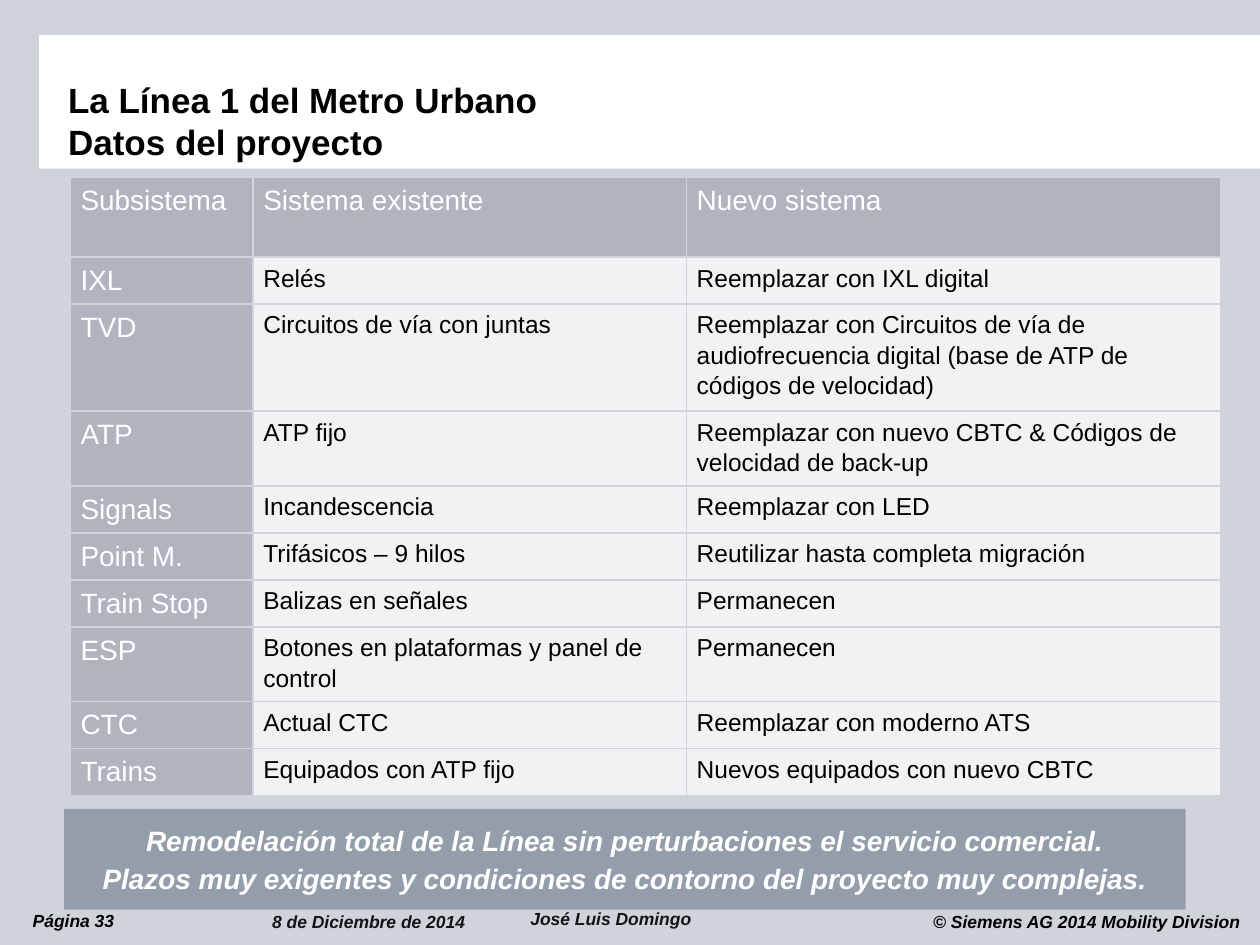
from lxml import etree
from pptx import Presentation
from pptx.dml.color import RGBColor
from pptx.enum.shapes import MSO_SHAPE
from pptx.enum.text import MSO_ANCHOR, PP_ALIGN
from pptx.oxml.ns import qn
from pptx.util import Inches, Pt

RECT = MSO_SHAPE.RECTANGLE
TOP, MIDDLE, BOTTOM = MSO_ANCHOR.TOP, MSO_ANCHOR.MIDDLE, MSO_ANCHOR.BOTTOM
LEFT, CENTER, RIGHT = PP_ALIGN.LEFT, PP_ALIGN.CENTER, PP_ALIGN.RIGHT

THEME = {
    "font": "Arial",
    "background": "D0D3DA", "band": "FEFFFF", "label": "AFB4BE",
    "cell": "F2F2F4", "callout": "949EAA",
    "title_text": {"size": 20, "color": "000000", "bold": True},
    "label_text": {"size": 16, "color": "FFFFFF"},
    "cell_text": {"size": 14, "color": "000000"},
    "callout_text": {"size": 16, "color": "FFFFFF", "bold": True, "italic": True},
    "footer_text": {"size": 10, "color": "000000", "bold": True, "italic": True},
    "footer_gray": {"size": 10, "color": "131418", "bold": True, "italic": True},
}

TITLE = "La Línea 1 del Metro Urbano\vDatos del proyecto"
HEADER = ("Subsistema", "Sistema existente", "Nuevo sistema")
# Each row ends with the number of text lines it holds
SUBSYSTEMS = [
    ("IXL", "Relés", "Reemplazar con IXL digital", 1),
    ("TVD", "Circuitos de vía con juntas",
     "Reemplazar con Circuitos de vía de audiofrecuencia digital "
     "(base de ATP de códigos de velocidad)", 3),
    ("ATP", "ATP fijo",
     "Reemplazar con nuevo CBTC & Códigos de velocidad de back-up", 2),
    ("Signals", "Incandescencia", "Reemplazar con LED", 1),
    ("Point M.", "Trifásicos – 9 hilos", "Reutilizar hasta completa migración", 1),
    ("Train Stop", "Balizas en señales", "Permanecen", 1),
    ("ESP", "Botones en plataformas y panel de control", "Permanecen", 2),
    ("CTC", "Actual CTC", "Reemplazar con moderno ATS", 1),
    ("Trains", "Equipados con ATP fijo", "Nuevos equipados con nuevo CBTC", 1),
]
CALLOUT = [
    "Remodelación total de la Línea sin perturbaciones el servicio comercial.",
    "Plazos muy exigentes y condiciones de contorno del proyecto muy complejas.",
]
# text, box, style, alignment, anchor
FOOTERS = [
    ("© Siemens AG 2014 Mobility Division", (3.99, 7.1, 5.85, 0.3),
     "footer_text", RIGHT, BOTTOM),
    ("Página 33", (0.26, 7.22, 0.78, 0.28), "footer_text", LEFT, TOP),
    ("8 de Diciembre de 2014", (2.16, 7.23, 1.58, 0.17), "footer_gray", LEFT, BOTTOM),
    ("José Luis Domingo", (4.21, 7.08, 1.44, 0.29), "footer_gray", LEFT, BOTTOM),
]

TABLE_LEFT, TABLE_TOP = 0.56, 1.41
COLUMN_WIDTHS = (1.45, 3.44, 4.24)
HEADER_HEIGHT = 0.63
ROW_HEIGHTS = {1: 0.37, 2: 0.59, 3: 0.85}


def paint(fill, color):
    fill.solid()
    fill.fore_color.rgb = RGBColor.from_string(THEME[color])


def write(tf, lines, style, **paragraph_format):
    look = dict(THEME[style])
    look["size"] = Pt(look["size"])
    color = RGBColor.from_string(look.pop("color"))
    for i, line in enumerate(lines):
        p = tf.paragraphs[0] if i == 0 else tf.add_paragraph()
        p.text = line
        for name, value in paragraph_format.items():
            if name != "space_before" or i:
                setattr(p, name, value)
        for r in p.runs:
            r.font.name = THEME["font"]
            r.font.color.rgb = color
            for name, value in look.items():
                setattr(r.font, name, value)


def set_frame(tf, anchor, margin=0):
    tf.word_wrap = True
    tf.vertical_anchor = anchor
    for side in ("left", "top", "right", "bottom"):
        setattr(tf, f"margin_{side}", Inches(margin))


def add_text(s, box, lines, style, anchor, **paragraph_format):
    tf = s.shapes.add_textbox(*map(Inches, box)).text_frame
    set_frame(tf, anchor)
    write(tf, lines, style, **paragraph_format)


def add_rect(s, box, color):
    sp = s.shapes.add_shape(RECT, *map(Inches, box))
    sp.shadow.inherit = False
    sp.line.fill.background()
    paint(sp.fill, color)
    return sp


def add_borders(cell):
    """Draw a thin rule in the background colour on all four sides."""
    tc_pr = cell._tc.get_or_add_tcPr()
    for i, side in enumerate(("a:lnL", "a:lnR", "a:lnT", "a:lnB")):
        ln = etree.Element(qn(side), w=str(Pt(1)))
        solid = etree.SubElement(ln, qn("a:solidFill"))
        etree.SubElement(solid, qn("a:srgbClr"), val=THEME["background"])
        tc_pr.insert(i, ln)


def add_subsystem_table(s):
    rows = [HEADER] + [row[:3] for row in SUBSYSTEMS]
    heights = [HEADER_HEIGHT] + [ROW_HEIGHTS[row[3]] for row in SUBSYSTEMS]
    box = (TABLE_LEFT, TABLE_TOP, sum(COLUMN_WIDTHS), sum(heights))
    table = s.shapes.add_table(len(rows), len(HEADER), *map(Inches, box)).table
    for column, width in zip(table.columns, COLUMN_WIDTHS):
        column.width = Inches(width)
    for i, (texts, height) in enumerate(zip(rows, heights)):
        table.rows[i].height = Inches(height)
        for j, text in enumerate(texts):
            kind = "label" if i == 0 or j == 0 else "cell"
            cell = table.cell(i, j)
            cell.margin_left = cell.margin_right = Inches(0.08)
            cell.margin_top = cell.margin_bottom = Inches(0.04)
            paint(cell.fill, kind)
            add_borders(cell)
            write(cell.text_frame, [text], f"{kind}_text", line_spacing=1.1)


def main():
    prs = Presentation()
    prs.slide_width, prs.slide_height = Inches(10), Inches(7.5)
    s = prs.slides.add_slide(prs.slide_layouts[6])
    paint(s.background.fill, "background")

    add_rect(s, (0.31, 0.28, 9.69, 1.06), "band")
    for text, box, style, align, anchor in FOOTERS:
        add_text(s, box, [text], style, anchor, alignment=align)
    add_subsystem_table(s)
    add_text(s, (0.54, 0.4, 9.24, 0.89), [TITLE], "title_text", BOTTOM,
             line_spacing=Pt(24))

    callout = add_rect(s, (0.51, 6.42, 8.9, 0.8), "callout")
    set_frame(callout.text_frame, MIDDLE, 0.12)
    write(callout.text_frame, CALLOUT, "callout_text",
          alignment=CENTER, space_before=Pt(2.5))

    prs.save("out.pptx")


if __name__ == "__main__":
    main()
